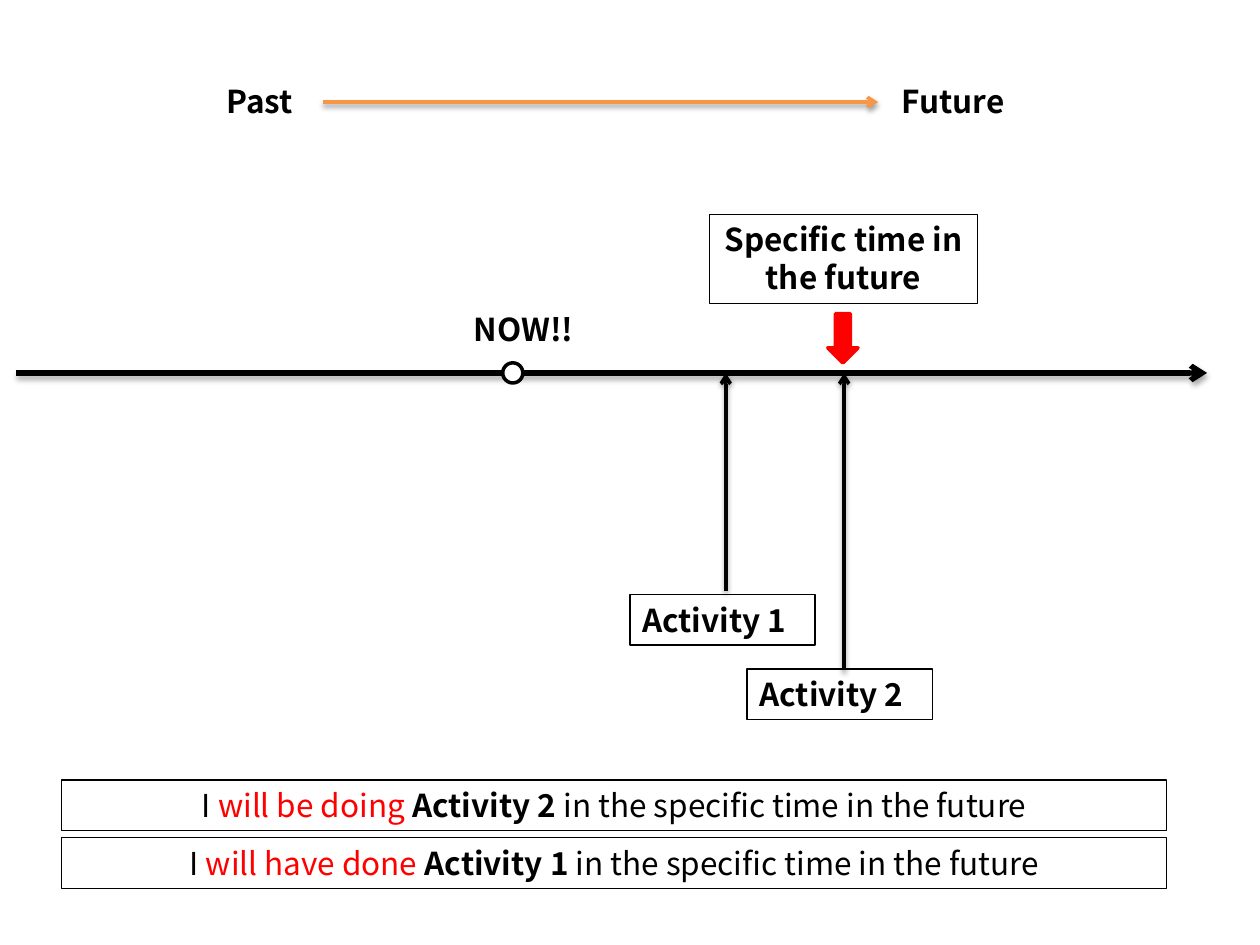
from lxml import etree
from pptx import Presentation
from pptx.dml.color import RGBColor
from pptx.enum.shapes import MSO_CONNECTOR, MSO_SHAPE
from pptx.enum.text import MSO_AUTO_SIZE, PP_ALIGN
from pptx.oxml.ns import qn
from pptx.util import Inches, Pt

LEFT, MID = PP_ALIGN.LEFT, PP_ALIGN.CENTER
GROW = MSO_AUTO_SIZE.SHAPE_TO_FIT_TEXT
STRAIGHT = MSO_CONNECTOR.STRAIGHT
DOWN, OVAL = MSO_SHAPE.DOWN_ARROW, MSO_SHAPE.OVAL

THEME = {
    "font": "Noto Sans CJK KR", "size": 18,
    "ink": "000000", "red": "FF0000", "orange": "F79646", "white": "FFFFFF",
    "thin": 0.75, "mid": 2, "thick": 3,
}

AXIS, ROW = 2.96, 0.4
LABELS = [("NOW!!", 3.66, 2.41), ("Past", 1.7, 0.6), ("Future", 7.06, 0.6)]
GOAL = ("Specific time in the future", 5.63, 1.7, 2.13, 0.71)
ACTS = [("Activity 1", 5, 4.72, 5.76, 4.69), ("Activity 2", 5.93, 5.31, 6.7, 5.32)]
NOTES = [("will be doing ", "Activity 2"), ("will have done ", "Activity 1")]
NOTE_TOP, NOTE_STEP = 6.19, 0.46


def color(name):
    return RGBColor.from_string(THEME[name])


def add_text(slide, box, runs, align=LEFT, framed=False):
    shape = slide.shapes.add_textbox(*map(Inches, box))
    if framed:
        shape.line.color.rgb = color("ink")
        shape.line.width = Pt(THEME["thin"])
    frame = shape.text_frame
    frame.word_wrap = True
    frame.auto_size = GROW
    para = frame.paragraphs[0]
    para.alignment = align
    for text, tone, bold in runs:
        run = para.add_run()
        run.text = text
        font = run.font
        font.name, font.size, font.bold = THEME["font"], Pt(THEME["size"]), bold
        font.color.rgb = color(tone)


def add_arrow(slide, start, end, tone="ink", width="mid", alpha=38, dist=1.6):
    line = slide.shapes.add_connector(STRAIGHT, *map(Inches, start + end))
    line.line.color.rgb = color(tone)
    line.line.width = Pt(THEME[width])
    etree.SubElement(line.line._get_or_add_ln(), qn("a:tailEnd"), type="arrow")
    effects = etree.SubElement(line._element.spPr, qn("a:effectLst"))
    shade = etree.SubElement(
        effects, qn("a:outerShdw"), blurRad=str(Pt(3.1)), dist=str(Pt(dist)),
        dir=str(90 * 60000), rotWithShape="0")
    tint = etree.SubElement(shade, qn("a:srgbClr"), val=THEME["ink"])
    etree.SubElement(tint, qn("a:alpha"), val=str(alpha * 1000))


def add_mark(slide, kind, box, fill, edge):
    shape = slide.shapes.add_shape(kind, *map(Inches, box))
    shape.shadow.inherit = False
    shape.fill.solid()
    shape.fill.fore_color.rgb = color(fill)
    shape.line.color.rgb = color(edge)
    shape.line.width = Pt(THEME["mid"])


def main():
    deck = Presentation()
    deck.slide_width, deck.slide_height = Inches(10), Inches(7.5)
    slide = deck.slides.add_slide(deck.slide_layouts[6])

    add_arrow(slide, (0.13, AXIS), (9.58, AXIS), width="thick", alpha=35, dist=1.8)
    add_mark(slide, DOWN, (6.57, 2.49, 0.24, 0.39), "red", "red")
    add_mark(slide, OVAL, (3.99, AXIS - 0.08, 0.16, 0.16), "white", "ink")
    add_arrow(slide, (2.56, 0.81), (6.97, 0.81), tone="orange")

    for text, left, top in LABELS:
        add_text(slide, (left, top, 1.1, ROW), [(text, "ink", True)])
    add_text(slide, GOAL[1:], [(GOAL[0], "ink", True)], MID, True)

    for text, left, top, x, y in ACTS:
        add_arrow(slide, (x, y), (x, AXIS))
        add_text(slide, (left, top, 1.47, ROW), [(text, "ink", True)], framed=True)

    for i, (verb, act) in enumerate(NOTES):
        runs = [("I ", "ink", False), (verb, "red", False), (act, "ink", True),
                (" in the specific time in the future", "ink", False)]
        add_text(slide, (0.49, NOTE_TOP + i * NOTE_STEP, 8.77, ROW), runs, MID, True)

    deck.save("out.pptx")


if __name__ == "__main__":
    main()
